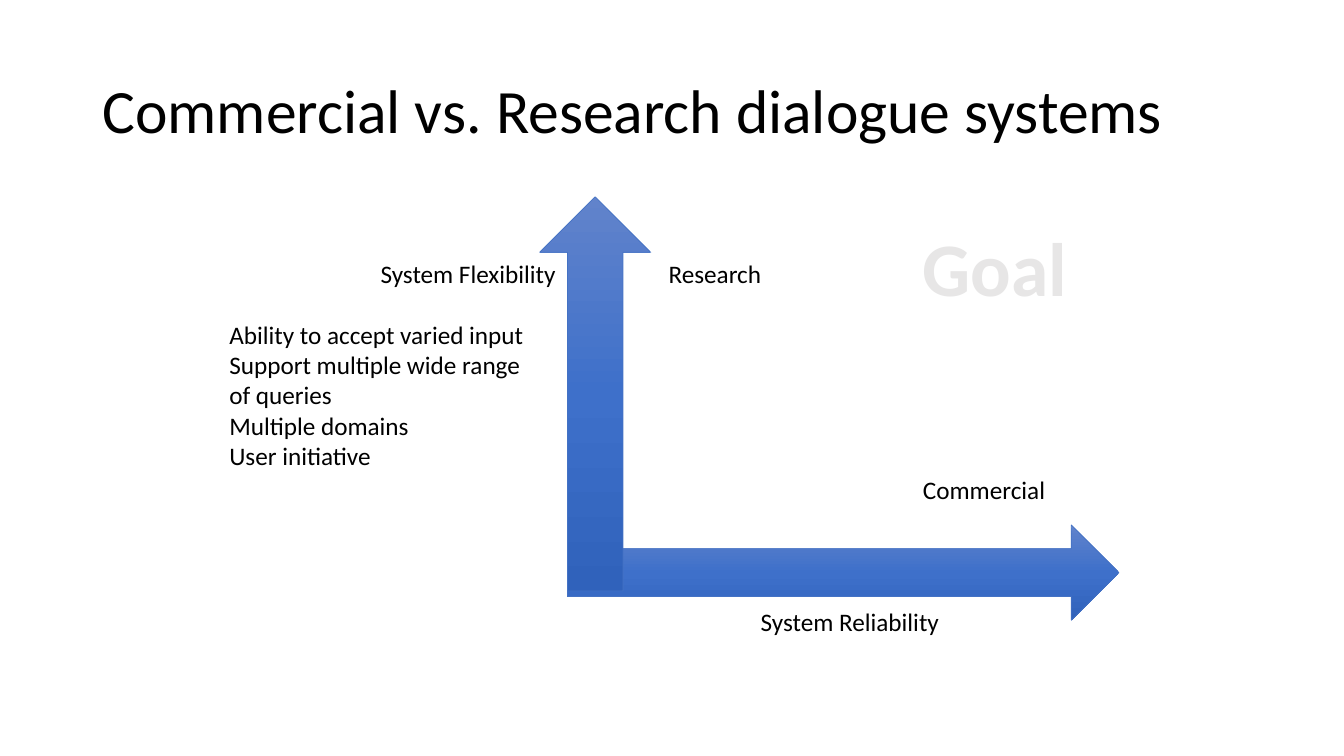
from copy import deepcopy
from pptx import Presentation
from pptx.dml.color import RGBColor
from pptx.enum.shapes import MSO_SHAPE
from pptx.enum.text import MSO_ANCHOR, MSO_AUTO_SIZE, PP_ALIGN
from pptx.oxml.ns import qn
from pptx.util import Cm, Pt

BLACK = RGBColor(0x00, 0x00, 0x00)
PALE = RGBColor(0xE7, 0xE6, 0xE6)
EDGE = RGBColor(0x44, 0x72, 0xC4)
SHADES = [RGBColor(0x61, 0x83, 0xCB), RGBColor(0x3E, 0x70, 0xCA),
          RGBColor(0x30, 0x62, 0xBB)]


def write(para, text, size=18, color=BLACK, bold=False):
    run = para.add_run()
    run.text = text
    run.font.name = "Calibri"
    run.font.size = Pt(size)
    run.font.bold = bold
    run.font.color.rgb = color


def add_box(left, top, width, height):
    box = slide.shapes.add_textbox(Cm(left), Cm(top), Cm(width), Cm(height))
    box.text_frame.word_wrap = True
    return box.text_frame


deck = Presentation()
deck.slide_width, deck.slide_height = Cm(33.87), Cm(19.05)
slide = deck.slides.add_slide(deck.slide_layouts[5])

# Title
title = slide.shapes.title
title.left, title.top = Cm(2.33), Cm(1.01)
title.width, title.height = Cm(29.21), Cm(3.68)
frame = title.text_frame
frame.auto_size = MSO_AUTO_SIZE.NONE
frame.vertical_anchor = MSO_ANCHOR.MIDDLE
head = frame.paragraphs[0]
head.alignment = PP_ALIGN.LEFT
head.line_spacing = 0.9
write(head, "Commercial vs. Research dialogue systems", 44)

# Axis arrows, the upright one in front
arrows = [
    (MSO_SHAPE.RIGHT_ARROW, 14.3, 13.23, 13.9, 2.4),
    (MSO_SHAPE.UP_ARROW, 13.6, 4.96, 2.8, 9.93),
]
for kind, left, top, width, height in arrows:
    arrow = slide.shapes.add_shape(kind, Cm(left), Cm(top), Cm(width), Cm(height))
    arrow.shadow.inherit = False
    arrow.line.color.rgb = EDGE
    arrow.line.width = Pt(0.5)
    arrow.fill.gradient()
    arrow.fill.gradient_angle = 270
    # A third gradient stop
    stops = arrow._element.spPr.find(".//" + qn("a:gsLst"))
    stops.append(deepcopy(stops[-1]))
    for i, stop in enumerate(arrow.fill.gradient_stops):
        stop.position = i / 2
        stop.color.rgb = SHADES[i]

# Single labels
labels = [
    ("System Reliability", 18.92, 15.16, 5.05),
    ("Commercial", 23.01, 11.84, 4.62),
    ("Research", 16.6, 6.38, 4.62),
]
for text, left, top, width in labels:
    write(add_box(left, top, width, 1.02).paragraphs[0], text)

# Flexibility heading and its points
frame = add_box(5.53, 6.38, 8.86, 6.4)
para = frame.paragraphs[0]
para._p.get_or_add_pPr().set("marL", str(Cm(3.81)))
para.space_after = Pt(22)
write(para, "System Flexibility")
points = ["Ability to accept varied input", "Support multiple wide range",
          "of queries", "Multiple domains", "User initiative"]
for point in points:
    write(frame.add_paragraph(), point)

# Goal
goal = add_box(22.8, 5.43, 4.55, 2.57).paragraphs[0]
goal.alignment = PP_ALIGN.CENTER
write(goal, "Goal", 54, PALE, True)

deck.save("out.pptx")
